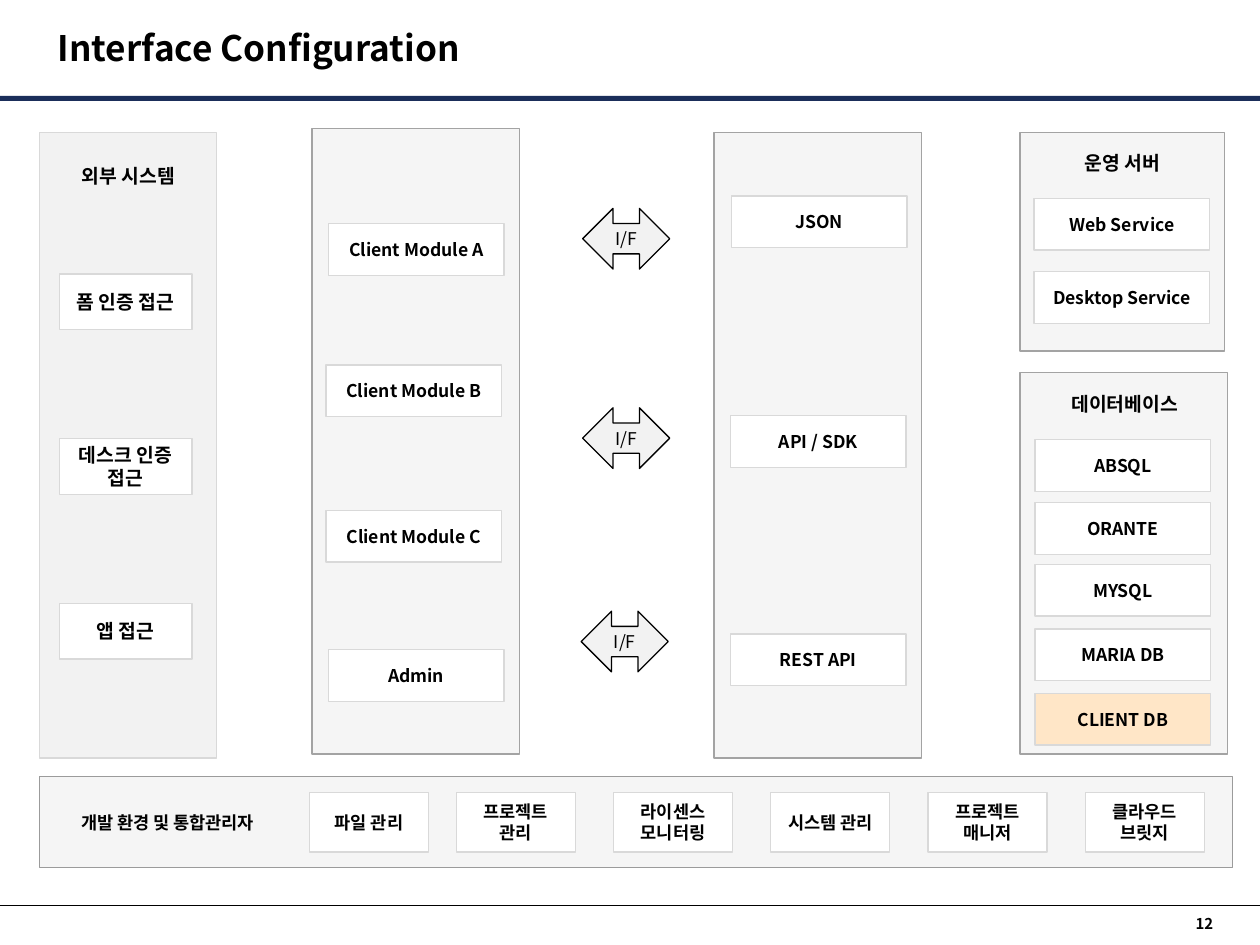
from lxml import etree
from pptx import Presentation
from pptx import util as u
from pptx.dml.color import RGBColor
from pptx.enum import shapes, text
from pptx.oxml import ns

FACE = "Noto Sans CJK KR"
HUES = {"navy": "1B2E5A", "black": "000000", "white": "FFFFFF", "pale": "F5F5F5",
        "light": "F2F2F2", "edge": "D9D9D9", "gray": "A3A3A3", "dark": "9B9B9B",
        "peach": "FFE6C7"}
RECT = shapes.MSO_SHAPE.RECTANGLE
ARROW = shapes.MSO_SHAPE.LEFT_RIGHT_ARROW
MID = text.PP_ALIGN.CENTER
SIDES = ("margin_left", "margin_top", "margin_right", "margin_bottom")


def hue(name):
    """Return the named colour."""
    return RGBColor.from_string(HUES[name])


def place(*box):
    """Turn centimetre values into lengths."""
    return [u.Cm(n) for n in box]


def apply(item, form):
    """Set each attribute of a format dict."""
    for key, val in form.items():
        setattr(item, key, val)


def write(shape, words, size, bold=True, align=MID, **form):
    """Fill a shape with one paragraph for each line of words."""
    frame = shape.text_frame
    apply(frame, form)
    for i, line in enumerate(words.split("\n")):
        para = frame.add_paragraph() if i else frame.paragraphs[0]
        para.alignment = align
        run = para.add_run()
        run.text = line
        apply(run.font, {"name": FACE, "size": u.Pt(size), "bold": bold})
        run.font.color.rgb = hue("black")
        east = etree.SubElement(run.font._element, ns.qn("a:ea"))
        east.set("typeface", FACE)


def block(slide, box, fill, edge=None, kind=RECT):
    """Draw a filled shape with an optional thin edge."""
    shape = slide.shapes.add_shape(kind, *place(*box))
    shape.shadow.inherit = False
    shape.fill.solid()
    shape.fill.fore_color.rgb = hue(fill)
    if edge:
        shape.line.color.rgb = hue(edge)
        shape.line.width = u.Pt(0.75)
    else:
        shape.line.fill.background()
    return shape


def card(slide, box, words, size=10, fill="white"):
    """Draw a labelled card."""
    write(block(slide, box, fill, "edge"), words, size, word_wrap=False,
          vertical_anchor=text.MSO_ANCHOR.MIDDLE)


def label(slide, box, words, size=11, align=MID, **form):
    """Add a bold text box."""
    form = {"word_wrap": True, **form}
    write(slide.shapes.add_textbox(*place(*box)), words, size, align=align, **form)


def swap(slide, left, top):
    """Draw a two-way interface arrow."""
    arrow = block(slide, (left, top, 1.75, 1.22), "light", "black", ARROW)
    write(arrow, "I/F", 10, False, vertical_anchor=text.MSO_ANCHOR.MIDDLE,
          word_wrap=True, **dict.fromkeys(SIDES, u.Cm(0.1)))


def frame(slide):
    """Draw the title, rules and page number."""
    block(slide, (0, 1.93, 25.32, 0.1), "navy")
    rule = slide.shapes.add_connector(shapes.MSO_CONNECTOR.STRAIGHT,
                                      *place(0, 18.21, 25.32, 18.21))
    rule.line.color.rgb = hue("black")
    rule.line.width = u.Pt(0.75)
    etree.SubElement(rule._element.spPr, ns.qn("a:effectLst"))
    label(slide, (23.98, 18.39, 0.4, 0.36), "12", 8.5, text.PP_ALIGN.RIGHT,
          word_wrap=False, **dict.fromkeys(SIDES, 0))
    label(slide, (0.91, 0.41, 11.76, 1.12), "Interface Configuration", 20,
          text.PP_ALIGN.LEFT)


def access(slide):
    """Draw the external system column."""
    block(slide, (0.79, 2.67, 3.56, 12.57), "light", "edge")
    label(slide, (0.84, 3.18, 3.48, 1.04), "외부 시스템")
    for i, words in enumerate(("폼 인증 접근", "데스크 인증\n접근", "앱 접근")):
        card(slide, (1.19, 5.51 + 3.31 * i, 2.67, 1.12), words, 11)


def modules(slide):
    """Draw the client, interface, server and database groups."""
    for box in ((6.27, 2.59, 4.17, 12.57), (14.35, 2.67, 4.17, 12.57),
                (20.5, 2.67, 4.11, 4.39), (20.5, 7.49, 4.17, 7.67)):
        block(slide, box, "pale", "gray")
    label(slide, (20.47, 2.92, 4.17, 0.81), "운영 서버")
    label(slide, (20.52, 7.77, 4.17, 0.81), "데이터베이스")
    cards = [
        (6.6, 4.5, "Client Module A"), (6.55, 7.34, "Client Module B"),
        (6.55, 10.26, "Client Module C"), (6.6, 13.06, "Admin"),
        (14.7, 3.94, "JSON"), (14.68, 8.36, "API / SDK"), (14.68, 12.75, "REST API"),
        (20.78, 3.99, "Web Service"), (20.78, 5.46, "Desktop Service"),
        (20.8, 8.84, "ABSQL"), (20.8, 10.11, "ORANTE"), (20.8, 11.35, "MYSQL"),
        (20.8, 12.65, "MARIA DB"), (20.8, 13.94, "CLIENT DB", "peach")]
    for left, top, words, *fill in cards:
        card(slide, (left, top, 3.53, 1.04), words, 10, *fill)
    for left, top in ((11.71, 4.19), (11.71, 8.2), (11.68, 12.29)):
        swap(slide, left, top)


def tools(slide):
    """Draw the management strip."""
    block(slide, (0.79, 15.62, 23.98, 1.83), "pale", "dark")
    label(slide, (1.09, 16.21, 4.55, 0.81), "개발 환경 및 통합관리자", 10)
    lefts = [6.22] + [9.17 + 3.16 * i for i in range(5)]
    names = ("파일 관리", "프로젝트\n관리", "라이센스\n모니터링", "시스템 관리",
             "프로젝트\n매니저", "클라우드\n브릿지")
    for left, words in zip(lefts, names):
        card(slide, (left, 15.94, 2.39, 1.19), words)


def main():
    """Build and save the slide."""
    deck = Presentation()
    apply(deck, {"slide_width": u.Cm(25.32), "slide_height": u.Cm(19)})
    slide = deck.slides.add_slide(deck.slide_layouts[6])
    for draw in (frame, access, modules, tools):
        draw(slide)
    deck.save("out.pptx")


if __name__ == "__main__":
    main()
